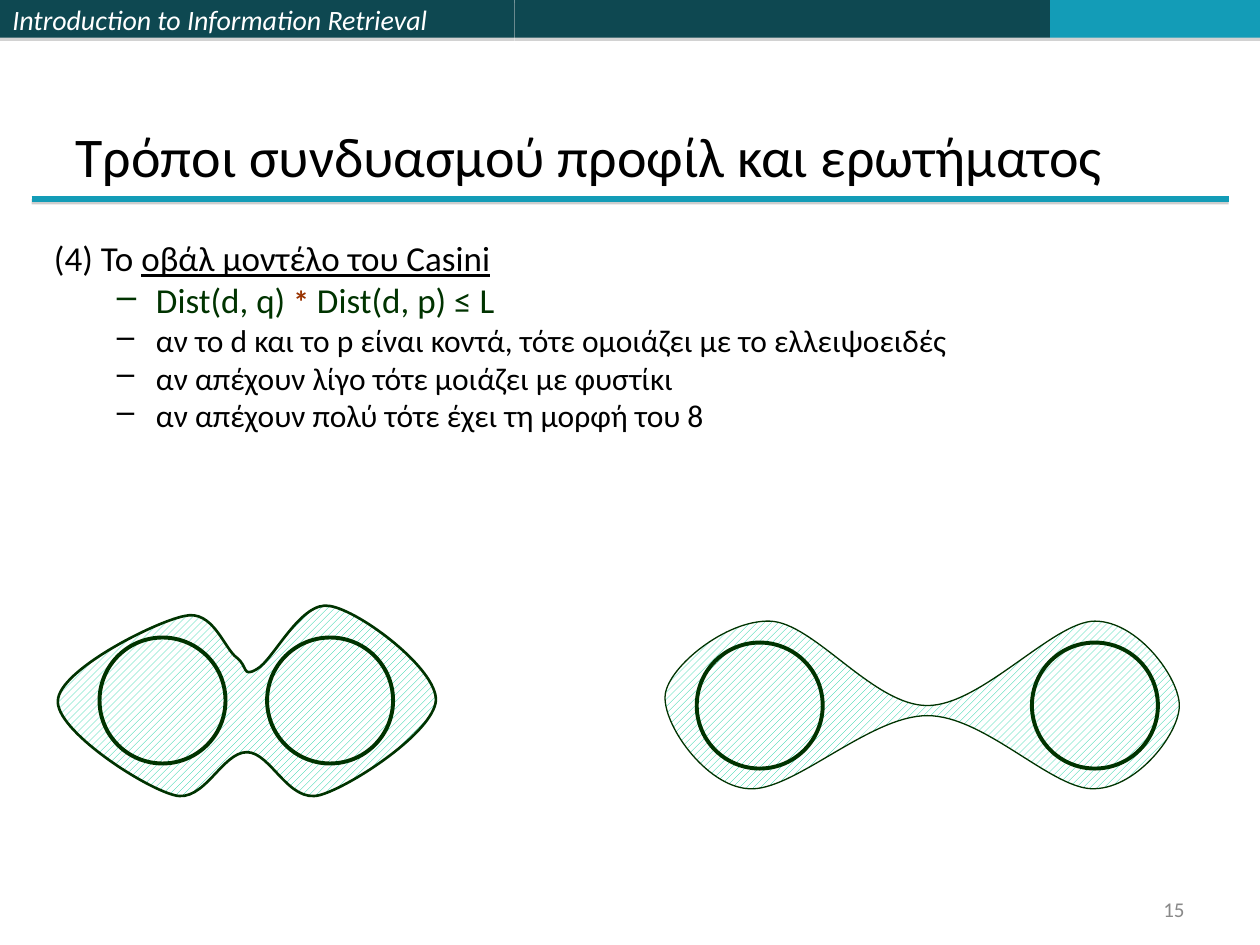
from dataclasses import dataclass

from lxml.etree import SubElement
from pptx import Presentation
from pptx.dml.color import RGBColor
from pptx.enum.dml import MSO_PATTERN
from pptx.enum.shapes import MSO_CONNECTOR, MSO_SHAPE
from pptx.enum.text import MSO_ANCHOR as ANCHOR, PP_ALIGN as ALIGN
from pptx.oxml.ns import qn
from pptx.util import Inches, Pt

COLORS = {"teal": "0E4851", "aqua": "139CB7", "white": "FFFFFF", "black": "000000",
          "gray": "898989", "green": "003300", "rust": "993300", "mint": "00CC99",
          "shadow": "808080"}
FONT = "Calibri"
SLIDE_WIDTH, SLIDE_HEIGHT = 10, 7.5

# Header bars: width in twelfths of the header, colour, text.
HEADER_COLUMNS = 12
HEADER_BARS = [(4.9, "teal", "Introduction to Information Retrieval"),
               (5.1, "teal", ""),
               (2, "aqua", "")]

# Each paragraph is a list of text pieces with their format.
HEADING = [("(4) Το ", dict(size=20)),
           ("οβάλ μοντέλο του Casini", dict(size=20, underline=True))]
POINTS = [
    [("Dist(d, q) ", dict(size=20, color="green")),
     ("*", dict(color="rust", bold=True)),
     (" Dist(d, p) ≤ L", dict(size=20, color="green"))],
    [("αν το d και το p είναι κοντά, τότε ομοιάζει με το ελλειψοειδές", {})],
    [("αν απέχουν λίγο τότε μοιάζει με φυστίκι", {})],
    [("αν απέχουν πολύ τότε έχει τη μορφή του 8", {})],
]

# Ovals are drawn on a grid of hundredths of an inch, from the corner of their box.
GRID_STEP = 0.01
CIRCLE_STEPS = 100
# An outline is a start point, then one row per curve: two controls and an end.
PEANUT = [(144, 46),
          (134, 39), (125, 7), (102, 13),
          (78, 18), (3, 56), (2, 80),
          (0, 103), (68, 148), (94, 155),
          (118, 162), (132, 121), (152, 121),
          (171, 121), (185, 162), (210, 155),
          (235, 148), (300, 105), (302, 80),
          (303, 55), (242, 9), (218, 5),
          (195, 0), (173, 48), (160, 55),
          (148, 62), (153, 53), (144, 46)]
FIGURE_EIGHT = [(211, 68),
                (168, 68), (121, 2), (86, 1),
                (51, 0), (6, 37), (3, 59),
                (0, 82), (35, 132), (69, 134),
                (104, 137), (165, 76), (211, 76),
                (257, 76), (311, 136), (344, 134),
                (378, 133), (411, 90), (411, 68),
                (411, 46), (378, 1), (344, 1),
                (311, 1), (254, 68), (211, 68)]


@dataclass
class Box:
    left: float
    top: float
    width: float
    height: float

    def emu(self):
        return [Inches(v) for v in (self.left, self.top, self.width, self.height)]

    def grid_square(self, column, row, steps):
        """Return a square placed on the fine grid of this box."""
        side = steps * GRID_STEP
        return Box(self.left + column * GRID_STEP, self.top + row * GRID_STEP, side, side)


def rgb(name):
    return RGBColor.from_string(COLORS[name])


def set_line(drawn, color, weight):
    drawn.line.color.rgb = rgb(color)
    drawn.line.width = Pt(weight)


def add_shadow(drawn, alpha, distance):
    """Give a bar or line a hard shadow straight below it."""
    effects = SubElement(drawn._element.spPr, qn("a:effectLst"))
    outer = SubElement(effects, qn("a:outerShdw"), blurRad="0",
                       dist=str(Pt(distance)), dir="5400000", rotWithShape="0")
    color = SubElement(outer, qn("a:srgbClr"), val=COLORS["shadow"])
    SubElement(color, qn("a:alpha"), val=str(alpha * 1000))


def write(paragraph, text, size=18, color="black", italic=False, bold=False, underline=False):
    run = paragraph.add_run()
    run.text = text
    font = run.font
    font.name, font.size = FONT, Pt(size)
    font.italic, font.bold, font.underline = italic, bold, underline
    font.color.rgb = rgb(color)


def write_pieces(paragraph, pieces):
    for text, style in pieces:
        write(paragraph, text, **style)


def set_indent(paragraph, margin, hanging, bullet=None):
    props = paragraph._p.get_or_add_pPr()
    props.set("marL", str(Inches(margin)))
    props.set("indent", str(-Inches(hanging)))
    if bullet:
        SubElement(props, qn("a:buChar"), char=bullet)


def add_text_frame(slide, box, anchor=ANCHOR.TOP):
    frame = slide.shapes.add_textbox(*box.emu()).text_frame
    frame.word_wrap = True
    frame.vertical_anchor = anchor
    return frame


def add_header(slide, box):
    column = box.width / HEADER_COLUMNS
    left = box.left
    for columns, color, text in HEADER_BARS:
        bar_box = Box(left, box.top, columns * column, box.height)
        bar = slide.shapes.add_shape(MSO_SHAPE.RECTANGLE, *bar_box.emu())
        bar.fill.solid()
        bar.fill.fore_color.rgb = rgb(color)
        bar.line.fill.background()
        add_shadow(bar, alpha=35, distance=1.8)
        if text:
            bar.text_frame.vertical_anchor = ANCHOR.MIDDLE
            course = bar.text_frame.paragraphs[0]
            course.alignment = ALIGN.LEFT
            write(course, text, size=16, color="white", italic=True)
        left += bar_box.width


def add_title(slide, box):
    """Place the title and the rule beneath it."""
    title = add_text_frame(slide, box, ANCHOR.BOTTOM).paragraphs[0]
    write(title, "Τρόποι συνδυασμού προφίλ και ερωτήματος", size=32)
    overhang, gap = 0.25, 0.03
    rule_top = Inches(box.top + box.height + gap)
    rule = slide.shapes.add_connector(
        MSO_CONNECTOR.STRAIGHT, Inches(box.left - overhang), rule_top,
        Inches(box.left + box.width + overhang), rule_top)
    set_line(rule, "aqua", 3)
    add_shadow(rule, alpha=38, distance=1.6)


def add_body(slide, box):
    frame = add_text_frame(slide, box)
    heading = frame.paragraphs[0]
    set_indent(heading, 0.38, 0.38)
    write_pieces(heading, HEADING)
    for pieces in POINTS:
        point = frame.add_paragraph()
        point.level = 1
        set_indent(point, 0.81, 0.31, bullet="–")
        write_pieces(point, pieces)


def bend_segments(outline_shape):
    """Turn every three straight segments of a freeform into one Bézier curve."""
    track = outline_shape._element.find(".//" + qn("a:path"))
    segments = track.findall(qn("a:lnTo"))
    for trio in zip(segments[::3], segments[1::3], segments[2::3]):
        curve = track.makeelement(qn("a:cubicBezTo"))
        trio[0].addprevious(curve)
        for segment in trio:
            curve.append(segment[0])
            track.remove(segment)


def add_cassini_oval(slide, box, outline, weight, circle_corners):
    """Draw a hatched oval and the circles inside it."""
    builder = slide.shapes.build_freeform(*outline[0], scale=Inches(GRID_STEP))
    builder.add_line_segments(outline[1:], close=True)
    oval = builder.convert_to_shape(Inches(box.left), Inches(box.top))
    bend_segments(oval)
    oval.shadow.inherit = False
    oval.fill.patterned()
    oval.fill.pattern = MSO_PATTERN.WIDE_UPWARD_DIAGONAL
    oval.fill.fore_color.rgb = rgb("mint")
    oval.fill.back_color.rgb = rgb("white")
    set_line(oval, "green", weight)
    for column, row in circle_corners:
        circle_box = box.grid_square(column, row, CIRCLE_STEPS)
        circle = slide.shapes.add_shape(MSO_SHAPE.OVAL, *circle_box.emu())
        circle.shadow.inherit = False
        circle.fill.background()
        set_line(circle, "green", 2.25)


def add_page_number(slide, box):
    number = add_text_frame(slide, box, ANCHOR.MIDDLE).paragraphs[0]
    number.alignment = ALIGN.RIGHT
    write(number, "15", size=12, color="gray")


def main():
    deck = Presentation()
    deck.slide_width, deck.slide_height = Inches(SLIDE_WIDTH), Inches(SLIDE_HEIGHT)
    slide = deck.slides.add_slide(deck.slide_layouts[6])
    add_header(slide, Box(0, 0, SLIDE_WIDTH, 0.3))
    add_title(slide, Box(0.5, 0.3, SLIDE_WIDTH - 1, 1.25))
    add_body(slide, Box(0.33, 1.83, 8.64, 2.5))
    add_cassini_oval(slide, Box(5.25, 4.92, 4.11, 1.38), FIGURE_EIGHT, 0.75,
                     circle_corners=[(28, 18), (294, 18)])
    add_cassini_oval(slide, Box(0.44, 4.76, 3.03, 1.61), PEANUT, 1.5,
                     circle_corners=[(35, 30), (168, 30)])
    add_page_number(slide, Box(7.17, 7.08, 2.33, 0.27))
    deck.save("out.pptx")


if __name__ == "__main__":
    main()
